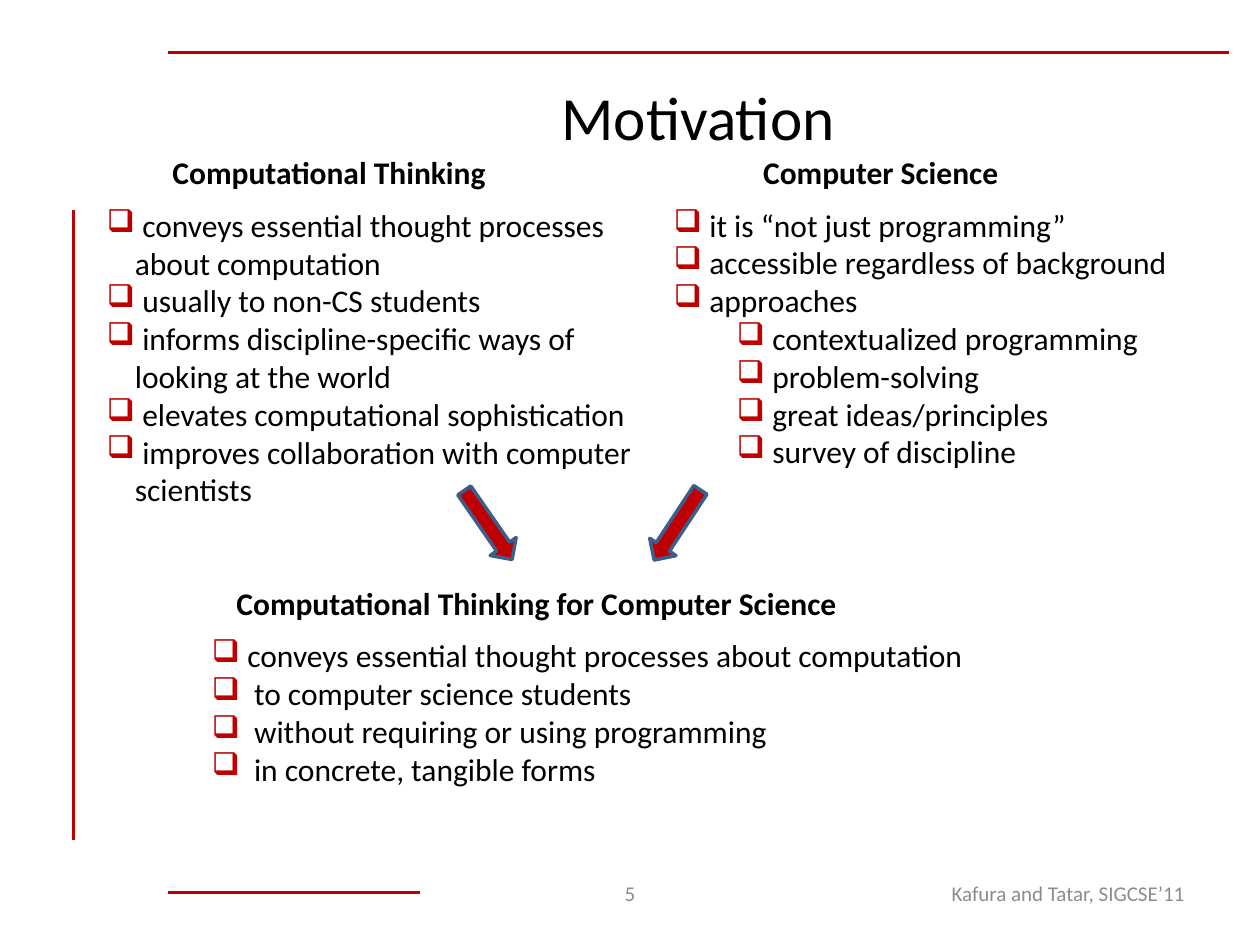
from dataclasses import dataclass

from lxml import etree
from pptx import Presentation
from pptx import util as u
from pptx.dml.color import RGBColor
from pptx.enum import shapes, text
from pptx.oxml.ns import qn

COLORS = {"red": "C00000", "black": "000000", "gray": "8C8C8C", "blue": "3A5F8C"}
FONT = "Calibri"
HANG = 16
LEVEL_INDENT = 36


@dataclass
class Area:
    left: float
    top: float
    width: float
    height: float


@dataclass
class Label:
    content: str
    area: Area
    size: float = 18
    color: str = "black"
    bold: bool = False
    align: text.PP_ALIGN = text.PP_ALIGN.LEFT
    anchor: text.MSO_ANCHOR = text.MSO_ANCHOR.TOP


@dataclass
class Item:
    content: str
    level: int = 0
    hang: float = HANG


@dataclass
class Section:
    heading: Label
    area: Area
    items: list[Item]


@dataclass
class Rule:
    start: tuple[float, float]
    end: tuple[float, float]


@dataclass
class Arrow:
    left: float
    rotation: float


def rgb(name: str) -> RGBColor:
    return RGBColor.from_string(COLORS[name])


def add_frame(page, area: Area):
    box = page.shapes.add_textbox(
        u.Pt(area.left), u.Pt(area.top), u.Pt(area.width), u.Pt(area.height))
    box.text_frame.word_wrap = True
    return box.text_frame


def style(para, size: float, color: str, bold: bool = False) -> None:
    para.font.name = FONT
    para.font.size = u.Pt(size)
    para.font.bold = bold
    para.font.color.rgb = rgb(color)


def add_label(page, label: Label) -> None:
    frame = add_frame(page, label.area)
    frame.vertical_anchor = label.anchor
    para = frame.paragraphs[0]
    para.text = label.content
    para.alignment = label.align
    style(para, label.size, label.color, label.bold)


def add_bullet(para, item: Item) -> None:
    props = para._p.get_or_add_pPr()
    props.set("marL", str(u.Pt(item.level * LEVEL_INDENT + item.hang)))
    props.set("indent", str(-u.Pt(item.hang)))
    color = etree.SubElement(props, qn("a:buClr"))
    etree.SubElement(color, qn("a:srgbClr"), val=COLORS["red"])
    # In Wingdings the letter q is the shadowed box
    etree.SubElement(props, qn("a:buFont"), typeface="Wingdings", charset="2")
    etree.SubElement(props, qn("a:buChar"), char="q")


def add_section(page, section: Section) -> None:
    add_label(page, section.heading)
    frame = add_frame(page, section.area)
    for index, item in enumerate(section.items):
        para = frame.add_paragraph() if index else frame.paragraphs[0]
        para.text = " " + item.content
        para.level = item.level
        add_bullet(para, item)
        style(para, 18, "black")


def add_rule(page, rule: Rule) -> None:
    line = page.shapes.add_connector(
        shapes.MSO_CONNECTOR.STRAIGHT, *map(u.Pt, rule.start + rule.end))
    line.line.color.rgb = rgb("red")
    line.line.width = u.Pt(1.5)
    etree.SubElement(line._element.spPr, qn("a:effectLst"))


def add_arrow(page, arrow: Arrow) -> None:
    shape = page.shapes.add_shape(
        shapes.MSO_SHAPE.DOWN_ARROW, u.Pt(arrow.left), u.Pt(276), u.Pt(18), u.Pt(48))
    shape.rotation = arrow.rotation
    shape.shadow.inherit = False
    shape.fill.solid()
    shape.fill.fore_color.rgb = rgb("red")
    shape.line.color.rgb = rgb("blue")
    shape.line.width = u.Pt(2)


RULES = [
    Rule((42, 120), (42, 480)),
    Rule((96, 30), (702, 30)),
    Rule((240, 510), (96, 510)),
]

LABELS = [
    Label("Motivation", Area(96, 36, 606, 60), size=35,
          align=text.PP_ALIGN.CENTER, anchor=text.MSO_ANCHOR.MIDDLE),
    Label("5", Area(246, 496, 228, 29), size=12, color="gray",
          align=text.PP_ALIGN.CENTER, anchor=text.MSO_ANCHOR.MIDDLE),
    Label("Kafura and Tatar, SIGCSE’11", Area(516, 496, 168, 29), size=12, color="gray",
          align=text.PP_ALIGN.RIGHT, anchor=text.MSO_ANCHOR.MIDDLE),
]

SECTIONS = [
    Section(
        Label("Computational Thinking", Area(91.5, 84, 263, 29), bold=True),
        Area(54, 114, 354, 181),
        [Item("conveys essential thought processes\vabout computation"),
         Item("usually to non-CS students"),
         Item("informs discipline-specific ways of\vlooking at the world"),
         Item("elevates computational sophistication"),
         Item("improves collaboration with computer\vscientists")]),
    Section(
        Label("Computer Science", Area(429, 84, 195, 29), bold=True),
        Area(378, 114, 336, 160),
        [Item("it is “not just programming”"),
         Item("accessible regardless of background"),
         Item("approaches"),
         Item("contextualized programming", level=1),
         Item("problem-solving", level=1),
         Item("great ideas/principles", level=1),
         Item("survey of discipline", level=1)]),
    Section(
        Label("Computational Thinking for Computer Science",
              Area(128, 330, 502, 29), bold=True),
        Area(114, 360, 506, 94),
        [Item("conveys essential thought processes about computation"),
         Item("to computer science students", hang=20),
         Item("without requiring or using programming", hang=20),
         Item("in concrete, tangible forms", hang=20)]),
]

ARROWS = [Arrow(378, 33.4), Arrow(270, 325.3)]


def main() -> None:
    deck = Presentation()
    deck.slide_width, deck.slide_height = u.Pt(720), u.Pt(540)
    page = deck.slides.add_slide(deck.slide_layouts[6])

    # Frame lines
    for rule in RULES:
        add_rule(page, rule)
    # Title and footer
    for label in LABELS:
        add_label(page, label)
    # Headed bullet lists
    for section in SECTIONS:
        add_section(page, section)
    # Arrows leading to the combined section
    for arrow in ARROWS:
        add_arrow(page, arrow)

    deck.save("out.pptx")


if __name__ == "__main__":
    main()
